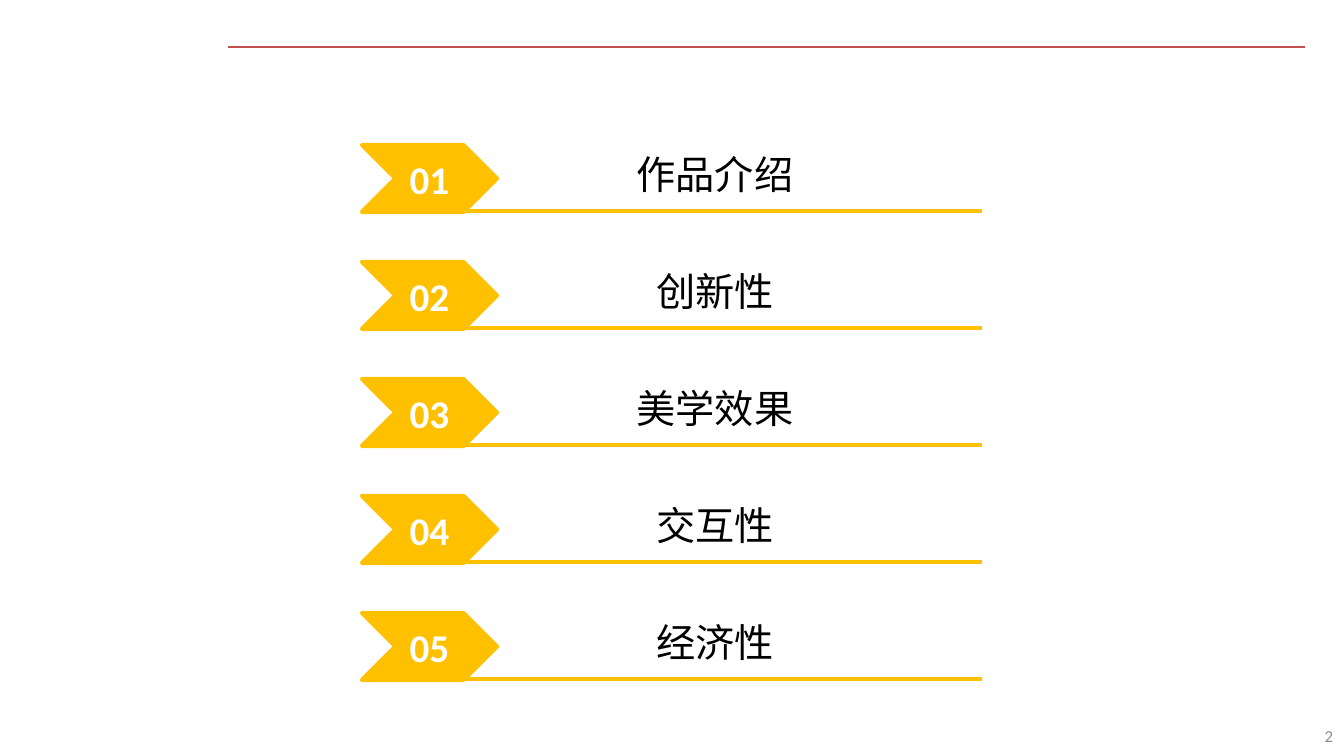
from lxml import etree
from pptx import Presentation
from pptx.dml.color import RGBColor
from pptx.enum.shapes import MSO_CONNECTOR, MSO_SHAPE
from pptx.enum.text import MSO_ANCHOR, MSO_AUTO_SIZE, PP_ALIGN
from pptx.oxml.ns import qn
from pptx.util import Pt

STRAIGHT = MSO_CONNECTOR.STRAIGHT
CHEVRON = MSO_SHAPE.CHEVRON
CENTER, RIGHT = PP_ALIGN.CENTER, PP_ALIGN.RIGHT
TOP, MIDDLE = MSO_ANCHOR.TOP, MSO_ANCHOR.MIDDLE
GROW = MSO_AUTO_SIZE.SHAPE_TO_FIT_TEXT

COLORS = {"red": "C0504D", "gold": "FFC000", "gray": "8C8C8C",
          "black": "000000", "white": "FFFFFF"}
LATIN, CHINESE = "Calibri", "Noto Sans CJK SC"
PX = 914400 / 100.8


def px(*lengths):
    """Turn lengths in px into EMU."""
    return [round(length * PX) for length in lengths]


def write(shape, text, size, color, font=LATIN, bold=False,
          align=CENTER, anchor=MIDDLE):
    frame = shape.text_frame
    frame.word_wrap = True
    frame.vertical_anchor = anchor
    paragraph = frame.paragraphs[0]
    paragraph.alignment = align
    run = paragraph.add_run()
    run.text = text
    run.font.size = Pt(size)
    run.font.bold = bold
    run.font.name = font
    run.font.color.rgb = RGBColor.from_string(COLORS[color])
    etree.SubElement(run.font._element, qn("a:ea"), typeface=font)


deck = Presentation()
deck.slide_width, deck.slide_height = px(1344, 756)
slide = deck.slides.add_slide(deck.slide_layouts[6])
shapes = slide.shapes

# Agenda rows: topic, numbered chevron, underline
ROW_TOP, ROW_PITCH, ROW_HEIGHT = 145, 117, 67
topics = ["作品介绍", "创新性", "美学效果", "交互性", "经济性"]
rules = [(228, 1305, 47, "red", 1.5)]

for index, topic in enumerate(topics):
    top = ROW_TOP + index * ROW_PITCH
    topic_box = shapes.add_textbox(*px(624, top, 182, 58))
    write(topic_box, topic, 28, "black", font=CHINESE, anchor=TOP)
    topic_box.text_frame.auto_size = GROW

    number = shapes.add_shape(CHEVRON, *px(362, top, 135, ROW_HEIGHT))
    number.shadow.inherit = False
    number.fill.solid()
    number.fill.fore_color.rgb = RGBColor.from_string(COLORS["gold"])
    number.line.color.rgb = RGBColor.from_string(COLORS["gold"])
    number.line.width = Pt(3)
    write(number, f"{index + 1:02d}", 28, "white", bold=True)
    rules.append((413, 982, top + ROW_HEIGHT - 1, "gold", 3))

# Header rule and row underlines
for left, right, y, color, width in rules:
    rule = shapes.add_connector(STRAIGHT, *px(left, y, right, y))
    rule.line.color.rgb = RGBColor.from_string(COLORS[color])
    rule.line.width = Pt(width)
    etree.SubElement(rule._element.spPr, qn("a:effectLst"))

page_number = shapes.add_textbox(*px(1041, 716, 302, 40))
write(page_number, "2", 12, "gray", align=RIGHT)

deck.save("out.pptx")
